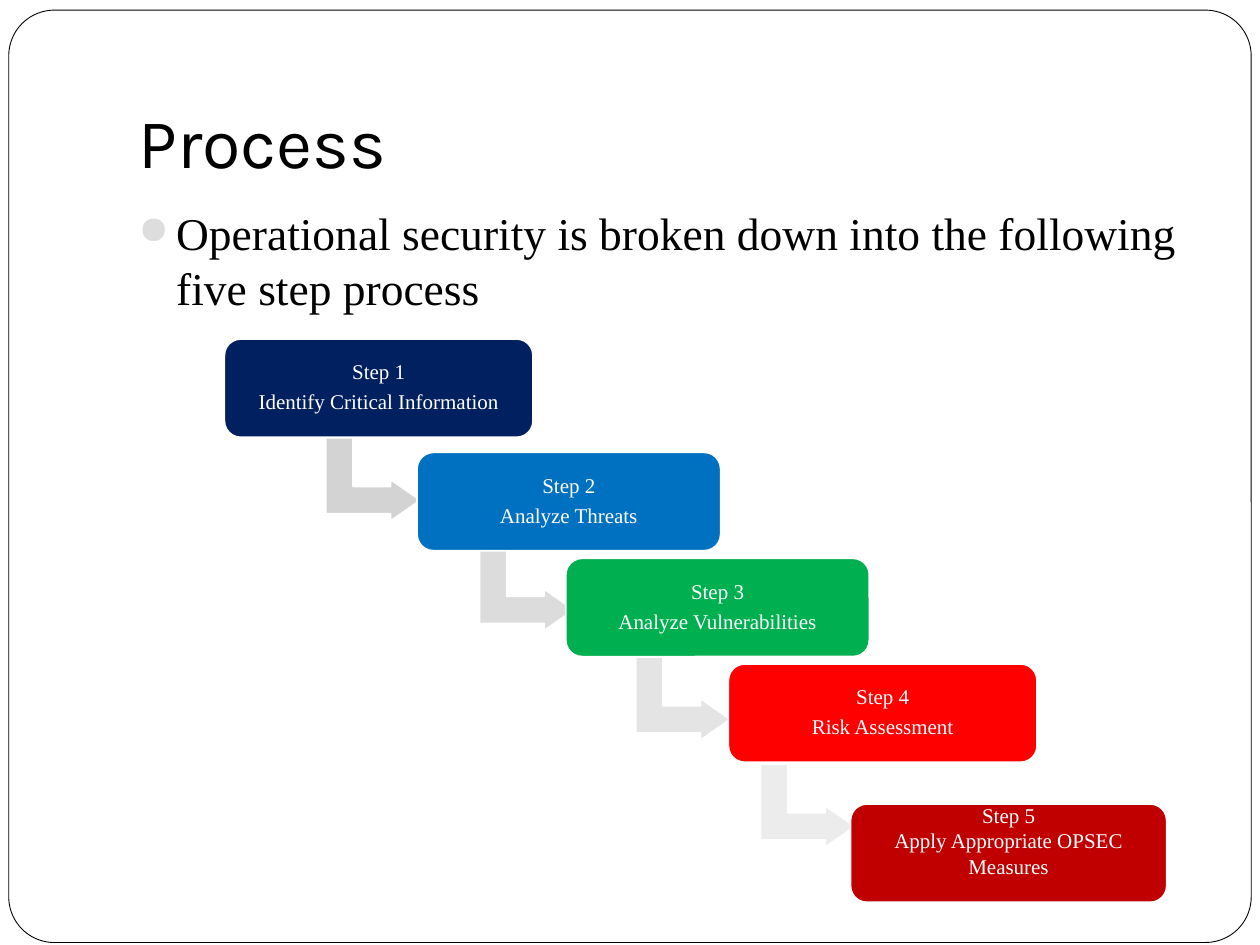
import pptx
import pptx.util
import pptx.dml.color
import pptx.enum.shapes
import pptx.enum.text
import pptx.oxml
import pptx.oxml.ns

Pt = pptx.util.Pt
Shape = pptx.enum.shapes.MSO_SHAPE
Anchor = pptx.enum.text.MSO_ANCHOR
Align = pptx.enum.text.PP_ALIGN

COLOURS = {
    "white": "FFFFFF",
    "black": "000000",
    "bullet": "DDDDDD",
    "navy": "002060",
    "blue": "0070C0",
    "green": "00B050",
    "red": "FF0000",
    "crimson": "C00000",
    "grey1": "D3D3D3",
    "grey2": "DCDCDC",
    "grey3": "E4E4E4",
    "grey4": "ECECEC",
}

STEPS = [
    ("Step 1\nIdentify Critical Information", "navy", 128.2, 193.7, 176.4),
    ("Step 2\nAnalyze Threats", "blue", 238.3, 258.5, 173.5),
    ("Step 3\nAnalyze Vulnerabilities", "green", 323.3, 319, 173.5),
    ("Step 4\nRisk Assessment", "red", 416.2, 379.4, 176.4),
    ("Step 5\vApply Appropriate OPSEC Measures", "crimson", 486, 459.4, 180.7),
]
ARROWS = [
    ("grey1", 189.4, 247),
    ("grey2", 277.2, 309.6),
    ("grey3", 366.5, 372.2),
    ("grey4", 437.8, 433.4),
]


class Painter:
    """Holds the slide's style and draws each kind of element on it."""

    heading_font = "Karla"
    text_font = "Times New Roman"

    def __init__(self, page):
        self.page = page

    def colour(self, name):
        return pptx.dml.color.RGBColor.from_string(COLOURS[name])

    def shape(self, kind, bounds, fill, line, weight, adjustments):
        box = self.page.shapes.add_shape(kind, *map(Pt, bounds))
        box.shadow.inherit = False
        box.fill.solid()
        box.fill.fore_color.rgb = self.colour(fill)
        box.line.color.rgb = self.colour(line)
        box.line.width = Pt(weight)
        for index, value in enumerate(adjustments):
            box.adjustments[index] = value
        return box

    def set_text(self, box, text, font, size, colour, anchor, insets):
        frame = box.text_frame
        frame.text = text
        frame.word_wrap = True
        frame.vertical_anchor = anchor
        frame.margin_left, frame.margin_top, frame.margin_right, frame.margin_bottom = map(Pt, insets)
        for para in frame.paragraphs:
            for span in para.runs:
                span.font.name = font
                span.font.size = Pt(size)
                span.font.color.rgb = self.colour(colour)
        return frame.paragraphs

    def border(self):
        self.shape(Shape.ROUNDED_RECTANGLE, (5, 5.8, 710, 532.8), "white", "black", 0.5, [0.049])

    def title(self, text):
        box = self.page.shapes.add_textbox(*map(Pt, (72, 21.6, 612, 90)))
        self.set_text(box, text, self.heading_font, 40, "black", Anchor.BOTTOM, (7.2, 3.6, 7.2, 7.2))

    def bullet(self, text):
        box = self.page.shapes.add_textbox(*map(Pt, (72, 113.8, 612, 360)))
        para = self.set_text(box, text, self.text_font, 26, "black", Anchor.TOP, (7.2, 3.6, 7.2, 3.6))[0]
        para.space_before = Pt(5.8)
        props = para._p.get_or_add_pPr()
        props.set("marL", str(Pt(21.6)))
        props.set("indent", str(-Pt(21.6)))
        space = pptx.oxml.ns.nsdecls("a")
        for markup in (
            f'<a:buClr {space}><a:srgbClr val="{COLOURS["bullet"]}"/></a:buClr>',
            f'<a:buSzPct {space} val="85000"/>',
            f'<a:buChar {space} char="●"/>',
        ):
            props.append(pptx.oxml.parse_xml(markup))

    def arrow(self, colour, left, top):
        bent = self.shape(Shape.BENT_UP_ARROW, (left, top, 47.5, 54), colour, "white", 1, [0.328, 0.25, 0.358])
        bent.rotation = 90

    def step(self, text, colour, left, top, width):
        box = self.shape(Shape.ROUNDED_RECTANGLE, (left, top, width, 56.2), colour, "white", 1, [0.167])
        wrapped = "\v" in text
        bottom = 18 if wrapped else 3.6
        paras = self.set_text(box, text, self.text_font, 12, "white", Anchor.MIDDLE, (3.6, 3.6, 3.6, bottom))
        for para in paras:
            para.alignment = Align.CENTER
            if not wrapped:
                para.line_spacing = 0.9
                para.space_after = Pt(4.2)


def main():
    deck = pptx.Presentation()
    deck.slide_width, deck.slide_height = Pt(720), Pt(540)
    painter = Painter(deck.slides.add_slide(deck.slide_layouts[6]))
    painter.border()
    painter.title("Process")
    painter.bullet("Operational security is broken down into the following five step process")
    for arrow, step in zip(ARROWS, STEPS):
        painter.arrow(*arrow)
        painter.step(*step)
    painter.step(*STEPS[-1])
    deck.save("out.pptx")


if __name__ == "__main__":
    main()
